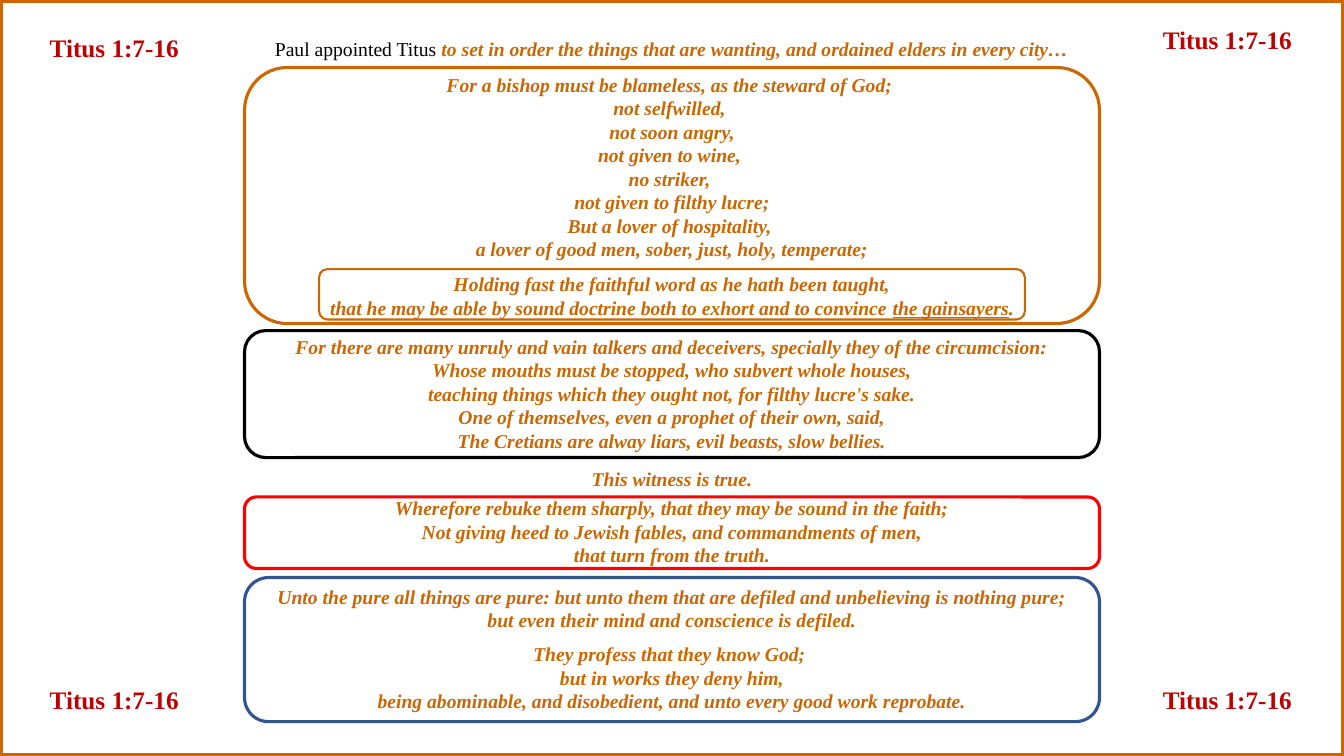
from collections import namedtuple

from pptx import Presentation
from pptx.dml.color import RGBColor
from pptx.enum.shapes import MSO_SHAPE as Shape
from pptx.enum.text import MSO_ANCHOR as Anchor, MSO_AUTO_SIZE as AutoSize, PP_ALIGN as Align
from pptx.util import Inches, Pt

ORANGE = RGBColor(0xCC, 0x66, 0x00)
CRIMSON = RGBColor(0xC0, 0x00, 0x00)
BLACK = RGBColor(0x00, 0x00, 0x00)
BLUE = RGBColor(0x32, 0x54, 0x91)
RED = RGBColor(0xFF, 0x00, 0x00)

WIDTH, HEIGHT = 13.33, 7.5
FONT = "Times New Roman"
LABEL = "Titus 1:7-16"
VERSE = dict(size=14, color=ORANGE, bold=True, italic=True)

Box = namedtuple("Box", "left top width height")


def centred(top, width, height):
    """Return a box centred across the slide."""
    return Box((WIDTH - width) / 2, top, width, height)


def inside(box, drop, width, height):
    """Return a box centred across another, a given drop below its top."""
    return Box(box.left + (box.width - width) / 2, box.top + drop, width, height)


def add_span(para, text, size=14, color=BLACK, bold=False, italic=False, underline=None):
    """Append formatted text to a paragraph, with a line break at each newline."""
    for index, line in enumerate(text.split("\n")):
        if index:
            para.add_line_break()
        span = para.add_run()
        span.text = line
        font = span.font
        font.name, font.size = FONT, Pt(size)
        font.bold, font.italic, font.underline = bold, italic, underline
        font.color.rgb = color


def add_text(page, box, *paragraphs, align=Align.CENTER, anchor=Anchor.TOP, wrap=True, **style):
    """Write paragraphs, each a string or a list of (text, format) pairs."""
    frame = page.shapes.add_textbox(*map(Inches, box)).text_frame
    frame.word_wrap = wrap
    frame.auto_size = AutoSize.SHAPE_TO_FIT_TEXT
    frame.vertical_anchor = anchor
    for index, content in enumerate(paragraphs):
        para = frame.add_paragraph() if index else frame.paragraphs[0]
        para.alignment = align
        spans = [(content, {})] if isinstance(content, str) else content
        for text, changes in spans:
            add_span(para, text, **{**style, **changes})


def add_outline(page, box, color, weight=2.25, kind=Shape.ROUNDED_RECTANGLE):
    """Draw an unfilled outline."""
    outline = page.shapes.add_shape(kind, *map(Inches, box))
    outline.shadow.inherit = False
    outline.fill.background()
    outline.line.color.rgb = color
    outline.line.width = Pt(weight)


def add_labels(page, box):
    """Put the passage reference in the four corners of the box."""
    width, height = 1.5, 0.4
    right, bottom = box.left + box.width - width, box.top + box.height - height
    for left, top in ((box.left, box.top + 0.08), (right, box.top), (box.left, bottom), (right, bottom)):
        add_text(page, Box(left, top, width, height), LABEL,
                 align=Align.LEFT, size=18, color=CRIMSON, bold=True)


def add_heading(page, box):
    """Write the opening line."""
    add_text(page, box, [
        ("Paul appointed Titus ", {}),
        ("to set in order the things that are wanting, and ordained elders in every city…", VERSE),
    ], anchor=Anchor.MIDDLE, wrap=False)


def add_bishop(page, box):
    """Show the bishop's qualities, with the last one framed."""
    add_text(
        page, inside(box, 0, 11.09, 1.99),
        "For a bishop must be blameless, as the steward of God; ",
        "not selfwilled, ",
        "not soon angry,\nnot given to wine, ",
        "no striker, ",
        "not given to filthy lucre;\nBut a lover of hospitality, ",
        "a lover of good men, sober, just, holy, temperate;",
        **VERSE)
    add_text(page, inside(box, 1.98, 9.61, 0.57), [
        ("Holding fast the faithful word as he hath been taught,\n"
         "that he may be able by sound doctrine both to exhort and to convince ", {}),
        ("the gainsayers", dict(underline=True)),
        (".", {}),
    ], **VERSE)
    add_outline(page, box, ORANGE)
    add_outline(page, inside(box, 2, 7, 0.5), ORANGE, 1.5)


def add_deceivers(page, box):
    """Show the verses on the deceivers."""
    add_text(
        page, inside(box, -0.01, 11.17, 1.28),
        "For there are many unruly and vain talkers and deceivers, specially they of the circumcision:\n"
        "Whose mouths must be stopped, who subvert whole houses,\n"
        "teaching things which they ought not, for filthy lucre's sake.\n"
        "One of themselves, even a prophet of their own, said,\n"
        "The Cretians are alway liars, evil beasts, slow bellies.",
        **VERSE)
    add_outline(page, box, BLACK)


def add_rebuke(page, box):
    """Show the verses on the rebuke."""
    add_text(
        page, inside(box, -0.06, 8.18, 0.81),
        "Wherefore rebuke them sharply, that they may be sound in the faith;\n"
        "Not giving heed to Jewish fables, and commandments of men,",
        "that turn from the truth.",
        **VERSE)
    add_outline(page, box, RED)


def add_purity(page, box):
    """Show the verses on the pure and the defiled."""
    add_text(
        page, inside(box, 0.02, 8.18, 0.57),
        "Unto the pure all things are pure: but unto them that are defiled and unbelieving is nothing pure;\n"
        "but even their mind and conscience is defiled.",
        **VERSE)
    add_text(
        page, inside(box, 0.59, 7.86, 0.81),
        "They profess that they know God; ",
        "but in works they deny him,\n"
        "being abominable, and disobedient, and unto every good work reprobate.",
        **VERSE)
    add_outline(page, box, BLUE)


def main():
    """Build the slide and save it."""
    deck = Presentation()
    deck.slide_width, deck.slide_height = Inches(WIDTH), Inches(HEIGHT)
    page = deck.slides.add_slide(deck.slide_layouts[6])
    add_outline(page, Box(0, 0, WIDTH, HEIGHT), ORANGE, 4.5, Shape.RECTANGLE)
    add_labels(page, centred(0.19, 12.54, 6.95))
    add_heading(page, centred(0.31, 8.2, 0.34))
    add_bishop(page, centred(0.67, 8.48, 2.54))
    add_deceivers(page, centred(3.28, 8.48, 1.26))
    add_text(page, centred(4.58, 4.85, 0.34), "This witness is true.", **VERSE)
    add_rebuke(page, centred(4.93, 8.48, 0.71))
    add_purity(page, centred(5.73, 8.48, 1.43))
    deck.save("out.pptx")


if __name__ == "__main__":
    main()
